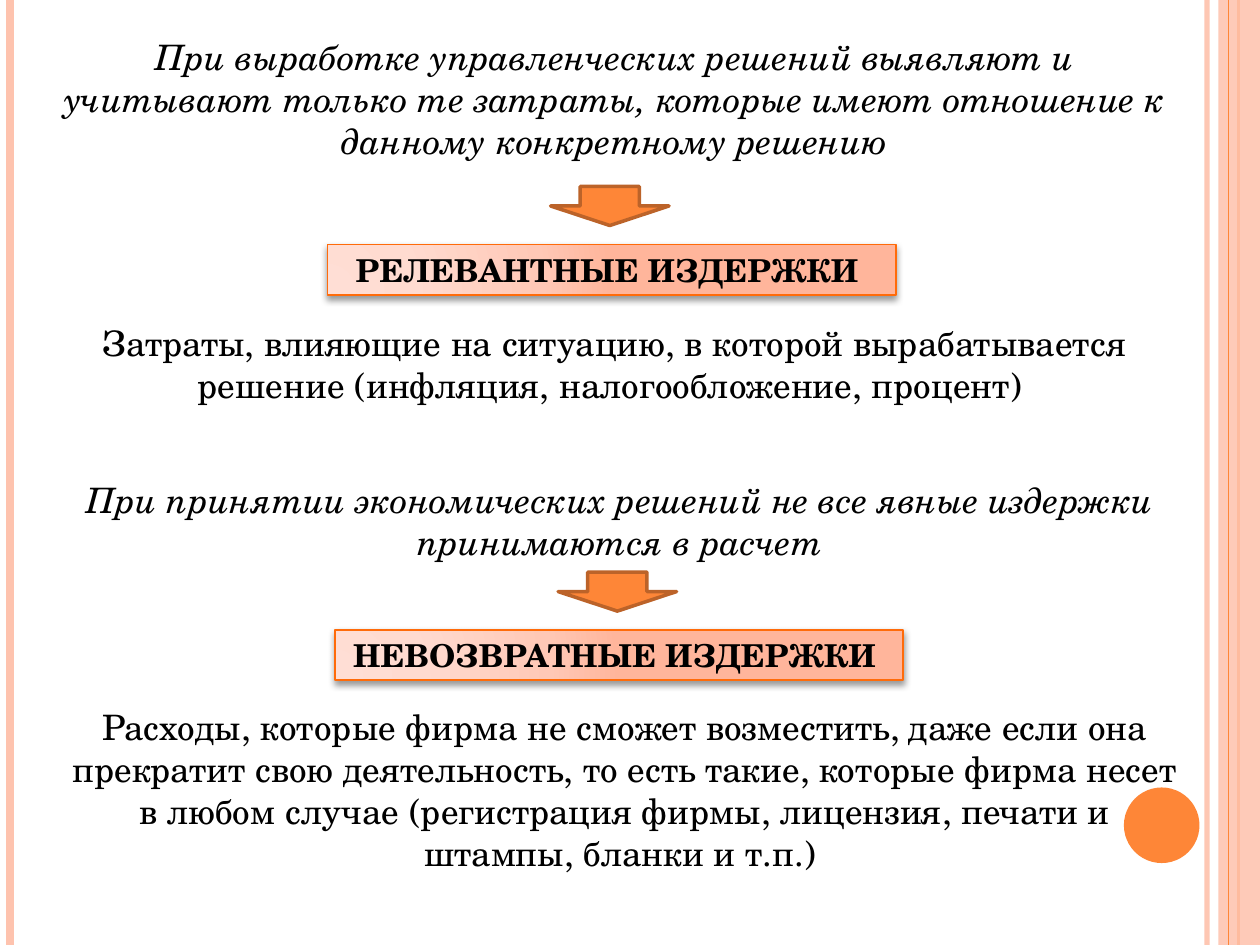
from lxml import etree
from pptx import Presentation
from pptx.dml.color import RGBColor
from pptx.enum.shapes import MSO_CONNECTOR, MSO_SHAPE
from pptx.enum.text import MSO_ANCHOR, MSO_AUTO_SIZE, PP_ALIGN
from pptx.oxml import parse_xml
from pptx.oxml.ns import qn
from pptx.util import Inches, Pt

STRAIGHT = MSO_CONNECTOR.STRAIGHT
RECTANGLE = MSO_SHAPE.RECTANGLE
OVAL = MSO_SHAPE.OVAL
DOWN_ARROW = MSO_SHAPE.DOWN_ARROW
CENTER = PP_ALIGN.CENTER
MIDDLE = MSO_ANCHOR.MIDDLE
FIT_SHAPE = MSO_AUTO_SIZE.SHAPE_TO_FIT_TEXT

FONT = "TeX Gyre Schola"
DRAWING_NS = 'xmlns:a="http://schemas.openxmlformats.org/drawingml/2006/main"'
COLORS = {
    "text": "000000",
    "orange": "FE8637",
    "peach": "FEC3AE",
    "arrow_edge": "BC6329",
    "term_edge": "FF6B0A",
    "shadow": "000000",
}
TERM_GRADIENT = [(0, "FFDED5"), (30, "FFDBD0"), (75, "FFC8B6"), (100, "FFB59B")]
SLIDE_HEIGHT = 7.5


def rgb(name):
    return RGBColor.from_string(COLORS[name])


def set_alpha(shape, percent):
    color = next(shape._element.spPr.iter(qn("a:srgbClr")))
    etree.SubElement(color, qn("a:alpha")).set("val", str(percent * 1000))


def add_stripe(slide, x, color, width, alpha=None):
    stripe = slide.shapes.add_connector(
        STRAIGHT, Inches(x), 0, Inches(x), Inches(SLIDE_HEIGHT))
    stripe.line.color.rgb = rgb(color)
    stripe.line.width = Pt(width)
    if alpha:
        set_alpha(stripe, alpha)
    etree.SubElement(stripe._element.spPr, qn("a:effectLst"))


def add_figure(slide, kind, box, fill, edge=None, edge_width=1):
    figure = slide.shapes.add_shape(kind, *map(Inches, box))
    figure.shadow.inherit = False
    figure.fill.solid()
    figure.fill.fore_color.rgb = rgb(fill)
    if edge:
        figure.line.color.rgb = rgb(edge)
        figure.line.width = Pt(edge_width)
    else:
        figure.line.fill.background()
    return figure


def write_text(shape, text, size=20, bold=False, italic=False):
    frame = shape.text_frame
    frame.word_wrap = True
    frame.auto_size = FIT_SHAPE
    paragraph = frame.paragraphs[0]
    paragraph.alignment = CENTER
    run = paragraph.add_run()
    run.text = text
    font = run.font
    font.name = FONT
    font.size = Pt(size)
    font.bold = bold
    font.italic = italic
    font.color.rgb = rgb("text")


def add_statement(slide, text, box, italic=False):
    statement = slide.shapes.add_textbox(*map(Inches, box))
    write_text(statement, text, italic=italic)


def apply_term_effects(term):
    properties = term._element.spPr
    stops = "".join(
        f'<a:gs pos="{position * 1000}"><a:srgbClr val="{color}"/></a:gs>'
        for position, color in TERM_GRADIENT)
    gradient = parse_xml(
        f'<a:gradFill {DRAWING_NS} rotWithShape="1"><a:gsLst>{stops}</a:gsLst>'
        '<a:path path="circle"><a:fillToRect l="5000" t="100000" r="120000" b="10000"/>'
        '</a:path></a:gradFill>')
    properties.replace(properties.find(qn("a:solidFill")), gradient)
    shadow = parse_xml(
        f'<a:outerShdw {DRAWING_NS} blurRad="{Pt(4)}" dist="{Pt(2)}" dir="5400000" '
        f'rotWithShape="0"><a:srgbClr val="{COLORS["shadow"]}">'
        '<a:alpha val="40000"/></a:srgbClr></a:outerShdw>')
    properties.find(qn("a:effectLst")).append(shadow)


def add_term(slide, text, left, top):
    add_figure(slide, DOWN_ARROW, (left + 1.77, top - 0.46, 0.94, 0.31),
               "orange", "arrow_edge", 2)
    term = add_figure(slide, RECTANGLE, (left, top, 4.51, 0.4), "peach", "term_edge")
    apply_term_effects(term)
    write_text(term, text, size=18, bold=True)
    term.text_frame.vertical_anchor = MIDDLE


def add_decoration(slide):
    add_stripe(slide, 9.58, "peach", 3, alpha=93)
    add_stripe(slide, 0.08, "peach", 4.5)
    add_stripe(slide, 9.83, "orange", 1.5)
    band = add_figure(slide, RECTANGLE, (9.67, 0, 0.33, SLIDE_HEIGHT), "peach")
    set_alpha(band, 87)
    add_stripe(slide, 9.75, "orange", 0.75)
    add_figure(slide, OVAL, (8.92, 6.25, 0.6, 0.6), "orange")


def main():
    presentation = Presentation()
    presentation.slide_width = Inches(10)
    presentation.slide_height = Inches(SLIDE_HEIGHT)
    slide = presentation.slides.add_slide(presentation.slide_layouts[6])

    add_decoration(slide)
    add_statement(
        slide,
        "При выработке управленческих решений выявляют и учитывают только те затраты, "
        "которые имеют отношение к данному конкретному решению",
        (0.31, 0.23, 9.14, 1.11), italic=True)
    add_term(slide, "РЕЛЕВАНТНЫЕ ИЗДЕРЖКИ ", 2.6, 1.94)
    add_statement(
        slide,
        "Затраты, влияющие на ситуацию, в которой вырабатывается решение "
        "(инфляция, налогообложение, процент) ",
        (0.23, 2.5, 9.3, 0.77))
    add_statement(
        slide,
        "При принятии экономических решений не все явные издержки принимаются в расчет",
        (0.23, 3.75, 9.38, 0.77), italic=True)
    add_term(slide, "НЕВОЗВРАТНЫЕ ИЗДЕРЖКИ ", 2.66, 5)
    add_statement(
        slide,
        "Расходы, которые фирма не сможет возместить, даже если она прекратит свою "
        "деятельность, то есть такие, которые фирма несет в любом случае (регистрация "
        "фирмы, лицензия, печати и штампы, бланки и т.п.) ",
        (0.39, 5.55, 9.14, 1.45))

    presentation.save("out.pptx")


if __name__ == "__main__":
    main()
